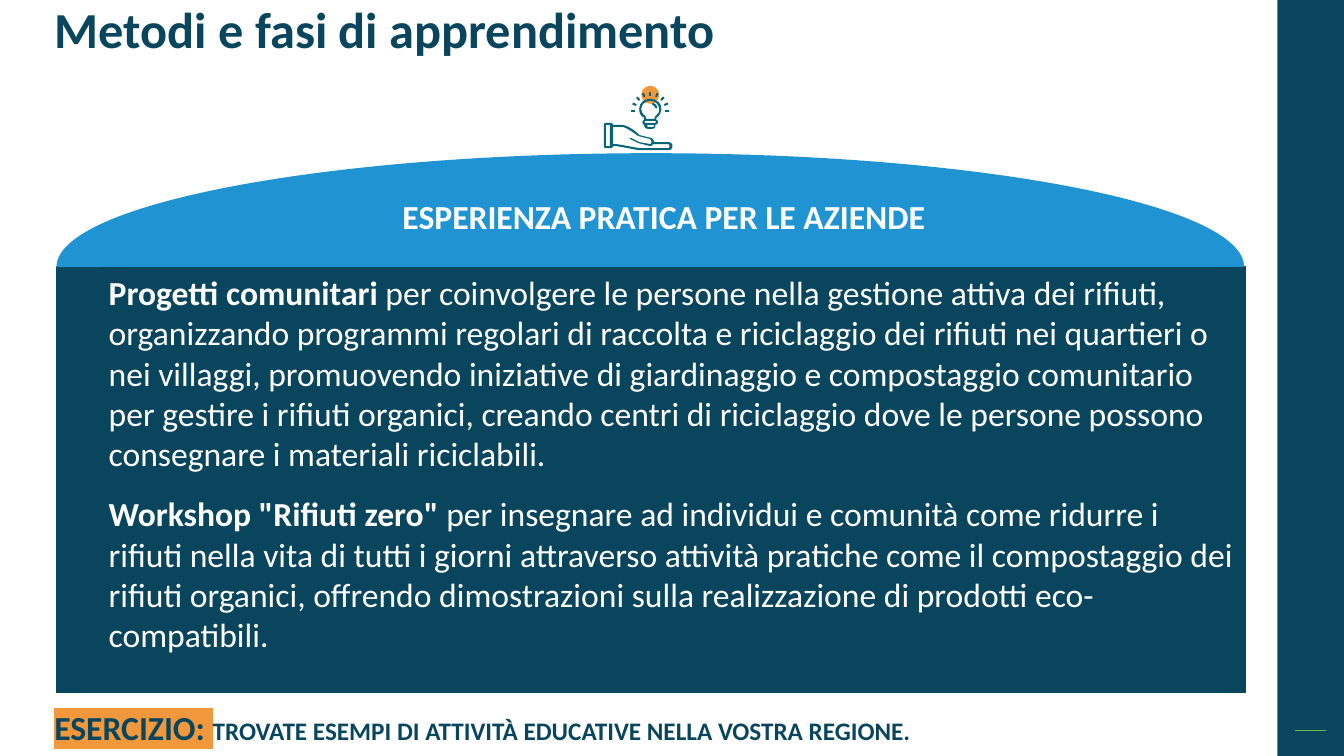
from math import cos, pi, sin

from lxml.etree import SubElement
from pptx import Presentation
from pptx.dml.color import RGBColor
from pptx.enum.shapes import MSO_CONNECTOR, MSO_SHAPE
from pptx.enum.text import MSO_ANCHOR, MSO_AUTO_SIZE, PP_ALIGN
from pptx.oxml.ns import qn
from pptx.util import Inches, Pt

NAVY, BLUE, TEAL = "09465E", "2094D2", "086575"
ORANGE, GREEN, WHITE = "F1983D", "60BA47", "FFFFFF"


def rgb(color):
    return RGBColor.from_string(color)


def points_of(segment):
    """Split a flat segment (x, y, x, y, ...) into points in EMU."""
    return [(Inches(x), Inches(y)) for x, y in zip(segment[::2], segment[1::2])]


def bend(freeform, segments):
    """Join the three steps of each six-number segment into one cubic curve."""
    steps = iter(list(freeform._element.iter(qn("a:lnTo"))))
    for segment in segments:
        group = [next(steps) for _ in points_of(segment)]
        if len(group) == 3:
            curve = SubElement(group[0].getparent(), qn("a:cubicBezTo"))
            group[0].addprevious(curve)
            for step in group:
                curve.append(step[0])
                step.getparent().remove(step)


class SlideWriter:
    font = "Calibri"

    def __init__(self, slide):
        self.slide = slide
        self.shapes = slide.shapes

    def paint(self, shape, color):
        shape.shadow.inherit = False
        shape.fill.solid()
        shape.fill.fore_color.rgb = rgb(color)
        shape.line.fill.background()
        return shape

    def block(self, kind, left, top, width, height, color):
        shape = self.shapes.add_shape(
            kind, Inches(left), Inches(top), Inches(width), Inches(height))
        return self.paint(shape, color)

    def outline(self, contours, color):
        """Fill contours made of points and cubic segments (two handles, one end)."""
        builder = None
        for start, *segments in contours:
            origin = points_of(start)[0]
            if builder is None:
                builder = self.shapes.build_freeform(*origin)
            else:
                builder.move_to(*origin)
            builder.add_line_segments(
                [point for segment in segments for point in points_of(segment)], close=True)
        shape = builder.convert_to_shape()
        bend(shape, [segment for contour in contours for segment in contour[1:]])
        return self.paint(shape, color)

    def rule(self, x1, y1, x2, y2, color):
        line = self.shapes.add_connector(
            MSO_CONNECTOR.STRAIGHT, Inches(x1), Inches(y1), Inches(x2), Inches(y2))
        line.line.color.rgb = rgb(color)
        line.line.width = Pt(1)
        SubElement(line._element.spPr, qn("a:effectLst"))

    def paragraph(self, frame, runs, size, color, align=PP_ALIGN.LEFT, bold=None,
                  before=0, first=True):
        """Add runs given as (text, properties) pairs."""
        paragraph = frame.paragraphs[0] if first else frame.add_paragraph()
        paragraph.alignment = align
        if before:
            paragraph.space_before = Pt(before)
        font = paragraph.font
        font.name, font.size, font.bold = self.font, Pt(size), bold
        font.color.rgb = rgb(color)
        for text, properties in runs:
            run = paragraph.add_run()
            run.text = text
            if "bold" in properties:
                run.font.bold = properties["bold"]
            if "size" in properties:
                run.font.size = Pt(properties["size"])
            if "highlight" in properties:
                mark = SubElement(run.font._element, qn("a:highlight"))
                SubElement(mark, qn("a:srgbClr"), val=properties["highlight"])
        return paragraph

    def title(self, text, left, top, width, height):
        heading = self.shapes.title
        heading.left, heading.top = Inches(left), Inches(top)
        heading.width, heading.height = Inches(width), Inches(height)
        frame = heading.text_frame
        frame.auto_size = MSO_AUTO_SIZE.NONE
        frame.vertical_anchor = MSO_ANCHOR.TOP
        self.paragraph(frame, [(text, {})], 36, NAVY, bold=True).line_spacing = 0.9

    def label(self, left, top, width, height, runs, size, color, align=PP_ALIGN.LEFT):
        box = self.shapes.add_textbox(
            Inches(left), Inches(top), Inches(width), Inches(height))
        box.text_frame.word_wrap = True
        self.paragraph(box.text_frame, runs, size, color, align, bold=True)


def draw_idea_icon(writer):
    # Glow behind the bulb
    writer.block(MSO_SHAPE.OVAL, 6.36, 0.85, 0.18, 0.18, ORANGE)

    # Bulb: outer edge, glass, base and cap
    writer.outline([
        [(6.51, 1.17), (6.54, 1.15, 6.56, 1.12, 6.56, 1.09),
         (6.57, 1.03, 6.51, 0.98, 6.45, 0.98), (6.39, 0.98, 6.34, 1.02, 6.34, 1.08),
         (6.34, 1.12, 6.35, 1.15, 6.39, 1.17), (6.39, 1.19),
         (6.37, 1.19, 6.36, 1.23, 6.39, 1.24), (6.39, 1.25),
         (6.39, 1.27, 6.41, 1.28, 6.43, 1.28), (6.47, 1.28),
         (6.49, 1.28, 6.5, 1.27, 6.5, 1.25), (6.5, 1.24),
         (6.54, 1.23, 6.53, 1.19, 6.51, 1.19)],
        [(6.36, 1.08), (6.36, 1.04, 6.4, 1, 6.45, 1),
         (6.5, 1, 6.54, 1.04, 6.54, 1.09), (6.54, 1.14, 6.49, 1.14, 6.49, 1.18),
         (6.41, 1.18), (6.41, 1.14, 6.36, 1.14, 6.36, 1.08)],
        [(6.47, 1.26), (6.43, 1.26), (6.42, 1.26, 6.42, 1.26, 6.42, 1.24),
         (6.49, 1.24), (6.49, 1.26, 6.48, 1.26, 6.47, 1.26)],
        [(6.5, 1.22), (6.4, 1.22), (6.39, 1.22, 6.39, 1.2, 6.4, 1.2),
         (6.5, 1.2), (6.51, 1.2, 6.51, 1.22, 6.5, 1.22)],
    ], TEAL)
    # Reflection
    writer.outline([[(6.47, 1.04), (6.48, 1.04, 6.5, 1.06, 6.5, 1.07),
                     (6.51, 1.09, 6.52, 1.07, 6.52, 1.06),
                     (6.51, 1.04, 6.5, 1.03, 6.48, 1.02),
                     (6.46, 1.02, 6.46, 1.04, 6.47, 1.04)]], TEAL)

    # Rays at equal angles over the bulb
    centre_x, centre_y, half = 6.45, 1.1, 0.01
    for ray in range(9):
        angle = pi * ray / 8
        dx, dy = cos(angle), -sin(angle)
        corners = [(0.15, -half), (0.19, -half), (0.19, half), (0.15, half)]
        writer.outline([[(centre_x + r * dx - s * dy, centre_y + r * dy + s * dx)
                         for r, s in corners]], TEAL)

    # Open hand: outer edge, cuff and palm
    writer.outline([
        [(6.63, 1.41), (6.49, 1.41), (6.49, 1.38, 6.46, 1.37, 6.46, 1.37),
         (6.34, 1.34), (6.34, 1.33, 6.23, 1.24, 6.17, 1.24), (6.08, 1.24),
         (6.07, 1.22), (6, 1.22), (5.99, 1.23), (5.99, 1.46), (6, 1.47), (6.07, 1.47),
         (6.08, 1.45), (6.11, 1.45), (6.12, 1.45, 6.17, 1.46, 6.23, 1.47),
         (6.33, 1.49, 6.34, 1.49, 6.35, 1.49), (6.63, 1.49),
         (6.65, 1.49, 6.67, 1.48, 6.67, 1.46), (6.67, 1.44),
         (6.67, 1.42, 6.65, 1.41, 6.63, 1.41)],
        [(6.05, 1.45), (6.01, 1.45), (6.01, 1.24), (6.05, 1.24)],
        [(6.64, 1.46), (6.63, 1.47), (6.35, 1.47), (6.34, 1.47, 6.28, 1.46, 6.23, 1.45),
         (6.13, 1.43, 6.11, 1.43, 6.11, 1.43), (6.08, 1.43), (6.08, 1.26), (6.17, 1.26),
         (6.21, 1.26, 6.3, 1.33, 6.33, 1.35), (6.45, 1.38),
         (6.45, 1.39, 6.46, 1.39, 6.46, 1.4), (6.46, 1.42), (6.45, 1.43), (6.34, 1.41),
         (6.26, 1.37), (6.24, 1.36, 6.24, 1.38, 6.25, 1.38), (6.33, 1.42), (6.45, 1.45),
         (6.46, 1.45, 6.47, 1.44, 6.48, 1.43), (6.63, 1.43), (6.64, 1.44)],
    ], TEAL)


def main():
    deck = Presentation()
    deck.slide_width, deck.slide_height = Inches(13.33), Inches(7.5)
    writer = SlideWriter(deck.slides.add_slide(deck.slide_layouts[5]))

    # Side band and title
    writer.block(MSO_SHAPE.RECTANGLE, 12.67, 0, 0.66, 7.5, NAVY)
    writer.rule(12.84, 7.25, 13.15, 7.25, GREEN)
    writer.title("Metodi e fasi di apprendimento", 0.44, 0, 8.74, 0.58)

    # Panel with its domed heading
    writer.outline([[(12.36, 6.88), (0.56, 6.88), (0.56, 2.64), (12.36, 2.64)]], NAVY)
    writer.outline([[(0.56, 2.65), (0.56, 2.03, 3.2, 1.52, 6.46, 1.52),
                     (9.71, 1.52, 12.34, 2.03, 12.34, 2.65)]], BLUE)
    writer.label(2, 1.89, 9.17, 0.5, [("ESPERIENZA PRATICA PER LE AZIENDE", {})],
                 24, WHITE, PP_ALIGN.CENTER)

    # Activities
    activities = [
        ("Progetti comunitari ",
         "per coinvolgere le persone nella gestione attiva dei rifiuti, organizzando "
         "programmi regolari di raccolta e riciclaggio dei rifiuti nei quartieri o nei "
         "villaggi, promuovendo iniziative di giardinaggio e compostaggio comunitario per "
         "gestire i rifiuti organici, creando centri di riciclaggio dove le persone "
         "possono consegnare i materiali riciclabili."),
        ("Workshop \"Rifiuti zero\" ",
         "per insegnare ad individui e comunità come ridurre i rifiuti nella vita di tutti "
         "i giorni attraverso attività pratiche come il compostaggio dei rifiuti organici, "
         "offrendo dimostrazioni sulla realizzazione di prodotti eco-compatibili."),
    ]
    panel = writer.block(MSO_SHAPE.RECTANGLE, 0.98, 2.65, 11.37, 3.94, NAVY).text_frame
    panel.word_wrap = True
    panel.vertical_anchor = MSO_ANCHOR.TOP
    for index, (name, description) in enumerate(activities):
        writer.paragraph(panel, [(name, {"bold": True}), (description, {})], 24, WHITE,
                         before=14 * index, first=index == 0)

    draw_idea_icon(writer)

    # Exercise
    writer.label(0.44, 6.96, 11.64, 0.5, [
        ("ESERCIZIO: ", {"size": 24, "highlight": ORANGE}),
        ("TROVATE ESEMPI DI ATTIVITÀ EDUCATIVE NELLA VOSTRA REGIONE.", {}),
    ], 18, NAVY)

    deck.save("out.pptx")


if __name__ == "__main__":
    main()
